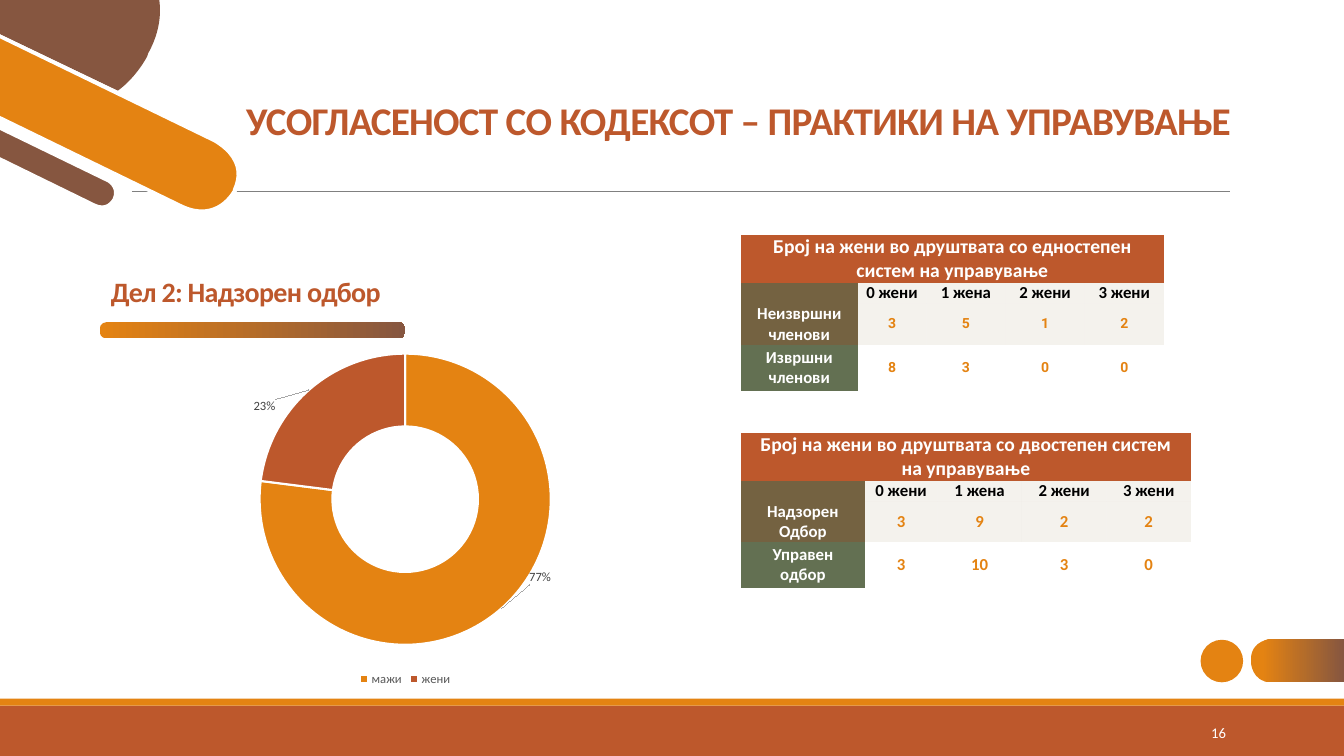
"""Build the slide on women in supervisory boards: a doughnut chart and two tables."""
import lxml.etree
import pptx
import pptx.chart.data
import pptx.dml.color
import pptx.enum.chart
import pptx.enum.shapes
import pptx.enum.text
import pptx.oxml.ns
import pptx.util

Pt = pptx.util.Pt
qn = pptx.oxml.ns.qn
RGBColor = pptx.dml.color.RGBColor
Shapes = pptx.enum.shapes.MSO_SHAPE
Align = pptx.enum.text.PP_ALIGN
Anchor = pptx.enum.text.MSO_ANCHOR

ORANGE = RGBColor(0xE4, 0x83, 0x12)
RUST = RGBColor(0xBD, 0x58, 0x2C)
BROWN = RGBColor(0x86, 0x56, 0x40)
OLIVE = RGBColor(0x74, 0x62, 0x41)
GREEN = RGBColor(0x63, 0x70, 0x52)
SAND = RGBColor(0x9B, 0x83, 0x57)
GRAY = RGBColor(0x80, 0x80, 0x80)
LEADER_GRAY = RGBColor(0xA6, 0xA6, 0xA6)
LABEL_GRAY = RGBColor(0x40, 0x40, 0x40)
LEGEND_GRAY = RGBColor(0x59, 0x59, 0x59)
BLACK = RGBColor(0, 0, 0)
WHITE = RGBColor(0xFF, 0xFF, 0xFF)

NO_STYLE = "{2D5ABB26-0587-4C30-8999-92F81FD0307C}"
UNITS_PER_POINT = 100

CORNER_OUTLINES = [
    (WHITE, [(0.7, 58.3), (20.2, 67.7), (43.2, 79.2, 64.1, 77.8, 82.8, 64.1),
             (96.5, 53.3, 103.7, 39.6, 103.7, 39.6), (105.1, 37.4),
             (111.6, 24.5, 113.8, 11.5, 112.3, 0), (115.2, 0),
             (116.6, 12.2, 114.5, 25.2, 107.3, 38.9), (106.6, 41),
             (105.8, 41.8, 98.6, 55.4, 84.2, 66.2), (76.3, 72.7, 64.8, 78.5, 49.7, 78.5),
             (40.3, 78.5, 30.2, 76.3, 18.7, 70.6), (0.7, 61.9)]),
    (ORANGE, [(152.6, 100.1), (152.6, 100.1, 179.3, 113, 167.8, 136.1), (167, 136.8),
              (167, 136.8, 155.5, 159.8, 129.6, 146.9), (0, 84.2), (0, 25.9)]),
    (BROWN, [(105.1, 40.3), (105.1, 40.3, 97.9, 54.7, 84.2, 64.8), (0, 24.5), (0, 0),
             (113.8, 0), (115.2, 10.8, 113.8, 23.8, 105.8, 38.2)]),
    (BROWN, [(0, 90.7), (76.3, 128.2), (76.3, 128.2, 86.4, 133.2, 82.1, 141.8), (82.1, 142.6),
             (82.1, 142.6, 77, 151.9, 67, 146.9), (0, 113.8)]),
    (WHITE, [(67.7, 145.4), (76.3, 149.8, 79.9, 142.6, 80.6, 141.8),
             (84.2, 133.9, 76.3, 129.6, 75.6, 129.6), (0, 92.9), (0, 89.3), (77, 126.7),
             (77, 126.7, 82.8, 129.6, 84.2, 134.6), (85, 137.5, 85, 140.4, 83.5, 143.3),
             (82.1, 146.2, 78.5, 149.8, 72.7, 149.8), (71.3, 149.8, 69.1, 149.8, 67, 148.3),
             (0, 115.9), (0, 112.3)]),
    (WHITE, [(130.3, 146.2), (154.8, 157.7, 165.6, 136.8, 166.3, 136.1), (166.3, 135.4),
             (170.6, 126, 169.9, 118.1, 163.4, 110.2), (159.1, 105.1, 152.6, 101.5, 152.6, 101.5),
             (0, 27.4), (0, 24.5), (154.1, 98.6), (154.1, 99.4, 167, 105.1, 170.6, 117.4),
             (172.8, 123.1, 172.1, 129.6, 169.2, 136.8), (168.5, 137.5),
             (168.5, 137.5, 160.6, 152.6, 144.7, 152.6), (139.7, 152.6, 134.6, 151.2, 128.9, 148.3),
             (0, 85.7), (0, 82.8)]),
]
PAGE_TAB = [(908.6, 487.4), (960, 487.4), (960, 456.5), (908.6, 456.5),
            (908.6, 456.5, 893.5, 456.5, 893.5, 471.6), (893.5, 472.3),
            (893.5, 472.3, 893.5, 487.4, 908.6, 487.4)]

COLUMN_HEADS = ["", "0 жени", "1 жена", "2 жени", "3 жени"]
ONE_TIER = [["Неизвршни членови", "3", "5", "1", "2"], ["Извршни членови", "8", "3", "0", "0"]]
TWO_TIER = [["Надзорен Одбор", "3", "9", "2", "2"], ["Управен одбор", "3", "10", "3", "0"]]


def paint(shape, color, second_color=None, start=0):
    shape.shadow.inherit = False
    shape.line.fill.background()
    if second_color is None:
        shape.fill.solid()
        shape.fill.fore_color.rgb = color
        return
    shape.fill.gradient()
    shape.fill.gradient_angle = 0
    stops = zip(shape.fill.gradient_stops, (color, second_color), (start, 1))
    for stop, stop_color, position in stops:
        stop.color.rgb = stop_color
        stop.position = position


def add_preset(slide, kind, box, *colors):
    shape = slide.shapes.add_shape(kind, *map(Pt, box))
    paint(shape, *colors)
    return shape


def add_outline(slide, segments, *colors):
    segments = [[round(value * UNITS_PER_POINT) for value in segment] for segment in segments]
    ends = [segment[-2:] for segment in segments]
    left, top = (min(values) for values in zip(*ends))
    builder = slide.shapes.build_freeform(*ends[0], scale=Pt(1) / UNITS_PER_POINT)
    builder.add_line_segments(ends[1:], close=True)
    shape = builder.convert_to_shape()
    lines = list(shape._element.iter(qn("a:lnTo")))
    for line, segment in zip(lines, segments[1:]):
        if len(segment) == 6:
            curve = lxml.etree.Element(qn("a:cubicBezTo"))
            for x, y in zip(segment[::2], segment[1::2]):
                lxml.etree.SubElement(curve, qn("a:pt"), x=str(x - left), y=str(y - top))
            line.getparent().replace(line, curve)
    paint(shape, *colors)


def add_rule(slide, left, right, top):
    line = slide.shapes.add_connector(pptx.enum.shapes.MSO_CONNECTOR.STRAIGHT,
                                      Pt(left), Pt(top), Pt(right), Pt(top))
    line.line.color.rgb = GRAY
    line.line.width = Pt(0.5)
    lxml.etree.SubElement(line._element.spPr, qn("a:effectLst"))


def write(paragraph, text, size, color, align, bold=True, font="Calibri"):
    paragraph.alignment = align
    run = paragraph.add_run()
    run.text = text
    run.font.name = font
    run.font.size = Pt(size)
    run.font.bold = bold
    run.font.color.rgb = color
    return run


def fill_heading(shape, box, text, size, align):
    shape.left, shape.top, shape.width, shape.height = map(Pt, box)
    frame = shape.text_frame
    frame.word_wrap = True
    frame.auto_size = pptx.enum.text.MSO_AUTO_SIZE.NONE
    frame.vertical_anchor = Anchor.BOTTOM
    frame.paragraphs[0].line_spacing = 0.85
    run = write(frame.paragraphs[0], text, size, RUST, align)
    run._r.get_or_add_rPr().set("spc", "-50")


def fill_cell(cell, text, fill, color, size=12, font="Calibri", margin=5, alpha=None):
    cell.fill.solid()
    cell.fill.fore_color.rgb = fill
    if alpha:
        color_element = cell._tc.tcPr.find(".//" + qn("a:srgbClr"))
        lxml.etree.SubElement(color_element, qn("a:alpha"), val=str(alpha * 1000))
    cell.margin_left = cell.margin_right = Pt(margin)
    cell.margin_top = cell.margin_bottom = 0
    cell.vertical_anchor = Anchor.MIDDLE
    paragraph = cell.text_frame.paragraphs[0]
    if text:
        write(paragraph, text, size, color, Align.CENTER, font=font)
    else:
        lxml.etree.SubElement(paragraph._p, qn("a:endParaRPr"), sz=str(size * 100))


def add_board_table(slide, top, widths, heights, heading, rows, value_size, value_font):
    frame = slide.shapes.add_table(len(heights), len(widths), Pt(529.2), Pt(top),
                                   Pt(sum(widths)), Pt(sum(heights)))
    table = frame.table
    table._tbl.tblPr.find(qn("a:tableStyleId")).text = NO_STYLE
    table.first_row = table.horz_banding = False
    for column, width in zip(table.columns, widths):
        column.width = Pt(width)
    for row, height in zip(table.rows, heights):
        row.height = Pt(height)
    table.cell(0, 0).merge(table.cell(0, len(widths) - 1))
    fill_cell(table.cell(0, 0), heading, RUST, WHITE, 14, margin=6)
    table.cell(0, 0).vertical_anchor = Anchor.TOP
    table.cell(0, 0).text_frame.paragraphs[0].space_before = Pt(2)
    for row_index, values in enumerate([COLUMN_HEADS] + rows, 1):
        last = row_index == len(rows) + 1
        fill_cell(table.cell(row_index, 0), values[0], GREEN if last else OLIVE, WHITE)
        for column_index, value in enumerate(values[1:], 1):
            style = (BLACK, 12, "Calibri") if row_index == 1 else (ORANGE, value_size, value_font)
            fill_cell(table.cell(row_index, column_index), value, WHITE if last else SAND,
                      *style, alpha=None if last else 10)


def place(parent, index, **settings):
    for old in parent.findall(qn("c:layout")):
        parent.remove(old)
    layout = lxml.etree.Element(qn("c:layout"))
    manual = lxml.etree.SubElement(layout, qn("c:manualLayout"))
    for name, value in settings.items():
        lxml.etree.SubElement(manual, qn("c:" + name), val=str(value))
    parent.insert(index, layout)


def style_leader_lines(labels):
    element = labels._element
    for tag in ("c:leaderLines", "c:spPr", "a:ln", "a:solidFill"):
        element = lxml.etree.SubElement(element, qn(tag))
    lxml.etree.SubElement(element, qn("a:srgbClr"), val=str(LEADER_GRAY))


def style_font(font, size, color):
    font.name = "Calibri"
    font.size = Pt(size)
    font.color.rgb = color


def add_gender_chart(slide):
    data = pptx.chart.data.CategoryChartData(number_format="0%")
    data.categories = ["мажи", "жени"]
    data.add_series("Series 1", [0.77, 0.23])
    chart = slide.shapes.add_chart(pptx.enum.chart.XL_CHART_TYPE.DOUGHNUT, Pt(85.7), Pt(242.6),
                                   Pt(407.5), Pt(250.6), data).chart
    chart.has_title = False
    style_font(chart.font, 10, BLACK)
    chart.has_legend = True
    chart.legend.position = pptx.enum.chart.XL_LEGEND_POSITION.BOTTOM
    chart.legend.include_in_layout = False
    style_font(chart.legend.font, 9, LEGEND_GRAY)
    plot = chart.plots[0]
    plot.vary_by_categories = True
    plot._element.find(qn("c:holeSize")).set("val", "75")
    place(plot._element.getparent(), 0, layoutTarget="inner", xMode="edge", yMode="edge",
          x=0.24, y=0.04, w=0.52, h=0.83)
    series = plot.series[0]
    labels = series.data_labels
    labels.show_value = True
    labels.number_format = "0%"
    labels.number_format_is_linked = False
    style_font(labels.font, 9, LABEL_GRAY)
    style_leader_lines(labels)
    for index, (color, x, y) in enumerate([(ORANGE, 0.11, -0.01), (RUST, -0.12, -0.03)]):
        point = series.points[index]
        point.format.fill.solid()
        point.format.fill.fore_color.rgb = color
        point.format.line.color.rgb = WHITE
        point.format.line.width = Pt(1.5)
        style_font(point.data_label.font, 9, LABEL_GRAY)
        place(labels._element.findall(qn("c:dLbl"))[index], 1, x=x, y=y)


def main():
    presentation = pptx.Presentation()
    presentation.slide_width, presentation.slide_height = Pt(960), Pt(540)
    slide = presentation.slides.add_slide(presentation.slide_layouts[5])
    add_preset(slide, Shapes.RECTANGLE, (0, 504, 960, 36), RUST)
    add_preset(slide, Shapes.RECTANGLE, (0, 499, 960, 5), ORANGE)
    add_rule(slide, 94.3, 878.6, 136.8)
    add_preset(slide, Shapes.OVAL, (857.6, 457, 30.4, 30.4), ORANGE)
    add_outline(slide, PAGE_TAB, ORANGE, BROWN, 0.12)
    for color, segments in CORNER_OUTLINES:
        add_outline(slide, segments, color)
    bar = add_preset(slide, Shapes.ROUNDED_RECTANGLE, (71.3, 230.2, 218.2, 11.5), ORANGE, BROWN)
    bar.adjustments[0] = 0.4
    fill_heading(slide.shapes.title, (72, 155.3, 267.8, 68.4), "Дел 2: Надзорен одбор", 20, Align.LEFT)
    heading = slide.shapes.add_textbox(0, 0, 0, 0)
    fill_heading(heading, (85.7, 37.4, 883.4, 68.4),
                 "УСОГЛАСЕНОСТ СО КОДЕКСОТ – ПРАКТИКИ НА УПРАВУВАЊЕ", 28, Align.CENTER)
    number = slide.shapes.add_textbox(Pt(779.8), Pt(508.6), Pt(103), Pt(28.8)).text_frame
    number.word_wrap = True
    number.vertical_anchor = Anchor.MIDDLE
    write(number.paragraphs[0], "16", 10.5, WHITE, Align.RIGHT, bold=False)
    add_board_table(slide, 167.8, [83.5, 49, 56.6, 56.6, 56.6], [34, 15, 29.5, 33],
                    "Број на жени во друштвата со едностепен систем на управување", ONE_TIER, 10, "Roboto")
    add_board_table(slide, 309.2, [88.6, 51.8, 60.4, 60.4, 60.4], [34.2, 14.6, 29.3, 32.4],
                    "Број на жени во друштвата со двостепен систем на управување", TWO_TIER, 12, "Calibri")
    add_gender_chart(slide)
    presentation.save("out.pptx")


if __name__ == "__main__":
    main()
